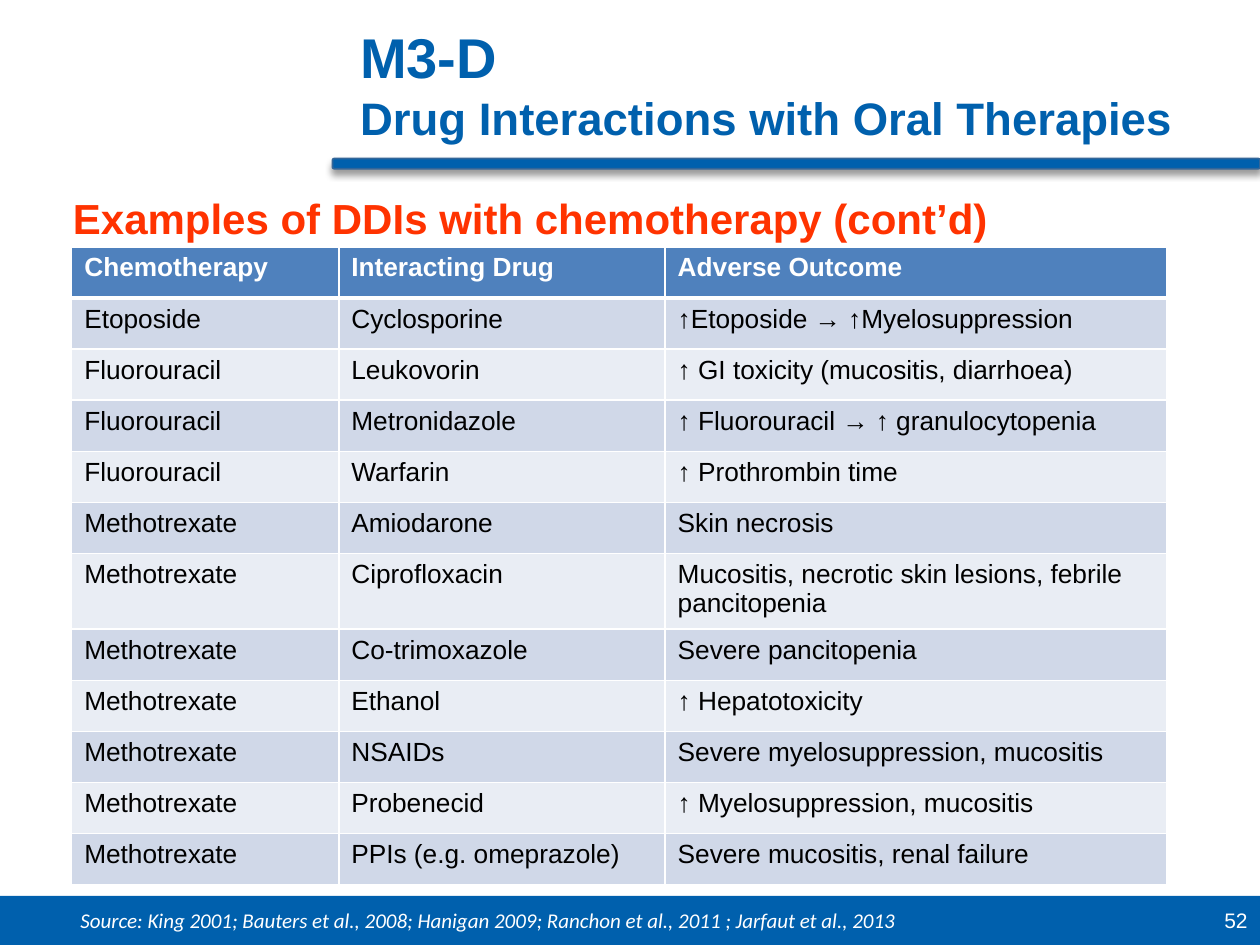
import dataclasses

import lxml.etree
import pptx
import pptx.dml.color
import pptx.enum.shapes
import pptx.enum.text
import pptx.oxml.ns
import pptx.util

Pt = pptx.util.Pt
Shapes = pptx.enum.shapes.MSO_SHAPE
Anchor = pptx.enum.text.MSO_ANCHOR
Align = pptx.enum.text.PP_ALIGN
qn = pptx.oxml.ns.qn


@dataclasses.dataclass(frozen=True)
class Theme:
    blue: str = "0060AD"
    bar_line: str = "336699"
    red: str = "FF3300"
    white: str = "FFFFFF"
    black: str = "000000"
    header_fill: str = "4F81BD"
    band_fills: tuple = ("D0D8E8", "E9EDF4")
    font: str = "Arial"
    source_font: str = "Calibri"
    title_size: int = 32
    subtitle_size: int = 26
    heading_size: int = 24
    table_size: int = 15
    footer_size: int = 12


THEME = Theme()

HEADERS = ("Chemotherapy", "Interacting Drug", "Adverse Outcome")
INTERACTIONS = (
    ("Etoposide", "Cyclosporine", "↑Etoposide → ↑Myelosuppression"),
    ("Fluorouracil", "Leukovorin", "↑ GI toxicity (mucositis, diarrhoea)"),
    ("Fluorouracil", "Metronidazole", "↑ Fluorouracil → ↑ granulocytopenia"),
    ("Fluorouracil", "Warfarin", "↑ Prothrombin time"),
    ("Methotrexate", "Amiodarone", "Skin necrosis"),
    ("Methotrexate", "Ciprofloxacin", "Mucositis, necrotic skin lesions, febrile pancitopenia"),
    ("Methotrexate", "Co-trimoxazole", "Severe pancitopenia"),
    ("Methotrexate", "Ethanol", "↑ Hepatotoxicity"),
    ("Methotrexate", "NSAIDs", "Severe myelosuppression, mucositis"),
    ("Methotrexate", "Probenecid", "↑ Myelosuppression, mucositis"),
    ("Methotrexate", "PPIs (e.g. omeprazole)", "Severe mucositis, renal failure"),
)


def rgb(color):
    return pptx.dml.color.RGBColor.from_string(color)


def style_run(run, size, color, bold=False, italic=False, font=THEME.font):
    run.font.name = font
    run.font.size = Pt(size)
    run.font.color.rgb = rgb(color)
    run.font.bold = bold
    run.font.italic = italic


def add_text(slide, box, text, size, color, anchor=Anchor.MIDDLE, align=Align.LEFT, **style):
    shape = slide.shapes.add_textbox(*map(Pt, box))
    text_frame = shape.text_frame
    text_frame.word_wrap = True
    text_frame.vertical_anchor = anchor
    text_frame.text = text
    paragraph = text_frame.paragraphs[0]
    paragraph.alignment = align
    for run in paragraph.runs:
        style_run(run, size, color, **style)
    return paragraph


def add_block(slide, kind, box, fill):
    shape = slide.shapes.add_shape(kind, *map(Pt, box))
    shape.shadow.inherit = False
    shape.fill.solid()
    shape.fill.fore_color.rgb = rgb(fill)
    shape.line.fill.background()
    return shape


def add_soft_shadow(shape):
    effects = shape._element.spPr.find(qn("a:effectLst"))
    shadow = lxml.etree.SubElement(
        effects, qn("a:outerShdw"), blurRad=str(Pt(4)), dist=str(Pt(3)),
        dir="5400000", algn="ctr", rotWithShape="0")
    color = lxml.etree.SubElement(shadow, qn("a:srgbClr"), val=THEME.black)
    lxml.etree.SubElement(color, qn("a:alpha"), val="40000")


def add_title(slide, box):
    left, top, width, height = box
    bar = add_block(slide, Shapes.ROUNDED_RECTANGLE, (left - 8.7, 90.6, width + 8.7, 5.8), THEME.blue)
    bar.line.color.rgb = rgb(THEME.bar_line)
    bar.line.width = Pt(1)
    add_soft_shadow(bar)
    paragraph = add_text(slide, box, "M3-D\vDrug Interactions with Oral Therapies",
                         THEME.title_size, THEME.blue, bold=True)
    paragraph.runs[1].font.size = Pt(THEME.subtitle_size)


def add_heading(slide, box):
    add_text(slide, box, "Examples of DDIs with chemotherapy (cont’d)",
             THEME.heading_size, THEME.red, bold=True)


def set_cell_borders(cell, bottom_width):
    properties = cell._tc.get_or_add_tcPr()
    widths = {"a:lnL": 1, "a:lnR": 1, "a:lnT": 1, "a:lnB": bottom_width}
    for index, (tag, width) in enumerate(widths.items()):
        line = lxml.etree.Element(qn(tag), w=str(Pt(width)))
        fill = lxml.etree.SubElement(line, qn("a:solidFill"))
        lxml.etree.SubElement(fill, qn("a:srgbClr"), val=THEME.white)
        properties.insert(index, line)


def add_interaction_table(slide, box, column_widths, row_heights):
    rows = (HEADERS,) + INTERACTIONS
    table = slide.shapes.add_table(len(rows), len(HEADERS), *map(Pt, box)).table
    for column, width in zip(table.columns, column_widths):
        column.width = Pt(width)
    for row_index, (row, texts, height) in enumerate(zip(table.rows, rows, row_heights)):
        is_header = row_index == 0
        row.height = Pt(height)
        fill = THEME.header_fill if is_header else THEME.band_fills[(row_index - 1) % 2]
        color = THEME.white if is_header else THEME.black
        for cell, text in zip(row.cells, texts):
            cell.fill.solid()
            cell.fill.fore_color.rgb = rgb(fill)
            set_cell_borders(cell, 3 if is_header else 1)
            cell.text_frame.text = text
            style_run(cell.text_frame.paragraphs[0].runs[0], THEME.table_size, color, bold=is_header)


def add_footer(slide, box):
    left, top, width, height = box
    add_block(slide, Shapes.RECTANGLE, box, THEME.blue)
    add_text(slide, (left + width - 168, top, 168, height), "52",
             THEME.footer_size, THEME.white, align=Align.RIGHT)
    add_text(slide, (left + 38.9, top + 2.9, 638.6, 21.6),
             "Source: King 2001; Bauters et al., 2008; Hanigan 2009; "
             "Ranchon et al., 2011 ; Jarfaut et al., 2013",
             THEME.footer_size, THEME.white, anchor=Anchor.TOP,
             italic=True, font=THEME.source_font)


def main():
    presentation = pptx.Presentation()
    presentation.slide_width = Pt(720)
    presentation.slide_height = Pt(540)
    slide = presentation.slides.add_slide(presentation.slide_layouts[6])
    add_footer(slide, (0, 511.9, 720, 28.1))
    add_title(slide, (198.7, 12.2, 521.3, 71.3))
    add_heading(slide, (34.6, 103, 630.7, 43.2))
    add_interaction_table(slide, (41, 141.1, 625.7, 364.3), (152.6, 186.5, 286.6),
                          [29.2] * (len(INTERACTIONS) + 1))
    presentation.save("out.pptx")


if __name__ == "__main__":
    main()
